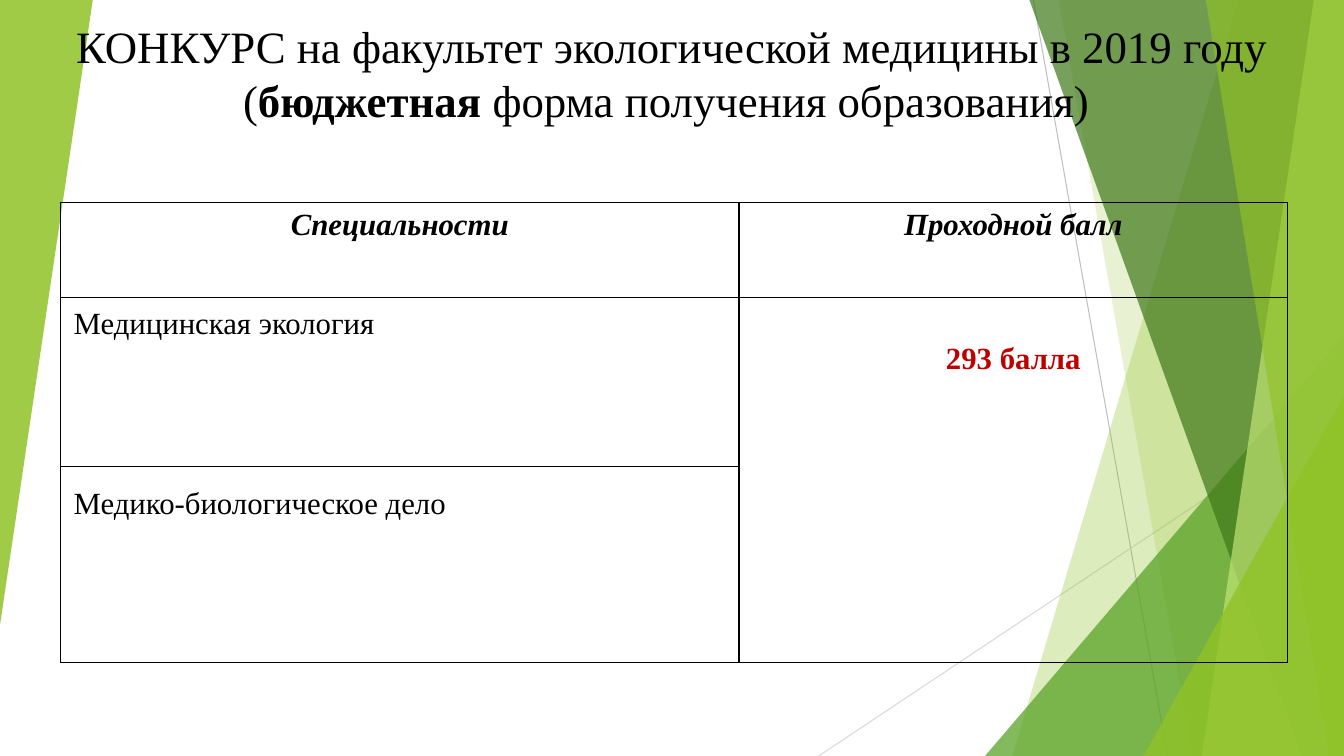
from lxml.etree import SubElement
from pptx import Presentation
from pptx.dml.color import RGBColor
from pptx.enum.shapes import MSO_CONNECTOR, MSO_SHAPE
from pptx.enum.text import MSO_ANCHOR, PP_ALIGN
from pptx.oxml.ns import qn
from pptx.util import Inches, Pt

WIDTH, HEIGHT = 13.33, 7.5
THEME = {
    "font": "Times New Roman", "title": 32, "cell": 22,
    "text": "000000", "accent": "C00000", "border": "000000",
    "lime": "90C226", "green": "54A021", "forest": "3F7819", "pale": "C0E474",
}

TITLE = [
    ("КОНКУРС на факультет экологической медицины в 2019 году (", False),
    ("бюджетная", True),
    (" форма получения образования) ", False),
]

RAYS = [
    ((10.25, 0), (11.58, HEIGHT), "BFBFBF"),
    ((WIDTH, 4.03), (8.12, HEIGHT), "D9D9D9"),
]

# kind, colour, opacity, geometry
FACETS = [
    ("band", "lime", 30, (12.28, 10.04)),
    ("band", "lime", 20, (10.5, 11.83)),
    ("triangle", "green", 72, (9.77, 3.33, 3.56, 4.17, 0)),
    ("band", "forest", 70, (10.21, 12.91)),
    ("band", "pale", 70, (13.03, 11.92)),
    ("band", "lime", 65, (11.96, 13.18)),
    ("triangle", "lime", 80, (11.34, 3.93, 1.99, 3.57, 0)),
    ("triangle", "lime", 85, (0, 0, 0.92, 6.2, 180)),
]

COLUMNS = [6.73, 5.44]
ROWS = [0.94, 1.68, 1.94]
CELLS = [
    (0, 0, "Специальности", PP_ALIGN.CENTER, True, True, "text", 0.05),
    (0, 1, "Проходной балл", PP_ALIGN.CENTER, True, True, "text", 0.05),
    (1, 0, "Медицинская экология", PP_ALIGN.LEFT, False, False, "text", 0.1),
    (1, 1, "293 балла", PP_ALIGN.CENTER, True, False, "accent", 0.44),
    (2, 0, "Медико-биологическое дело", PP_ALIGN.LEFT, False, False, "text", 0.2),
]


def rgb(name):
    return RGBColor.from_string(THEME.get(name, name))


def style_run(run, size, color, bold=False, italic=False):
    run.font.name = THEME["font"]
    run.font.size = Pt(THEME[size])
    run.font.color.rgb = rgb(color)
    run.font.bold = bold
    run.font.italic = italic


def add_ray(slide, start, end, color):
    ray = slide.shapes.add_connector(
        MSO_CONNECTOR.STRAIGHT, *(Inches(value) for value in start + end))
    ray.line.color.rgb = rgb(color)
    ray.line.width = Pt(0.75)
    SubElement(ray._element.spPr, qn("a:effectLst"))


def add_facet(slide, kind, color, opacity, geometry):
    if kind == "band":
        top_left, bottom_left = geometry
        outline = [(top_left, 0), (WIDTH, 0), (WIDTH, HEIGHT), (bottom_left, HEIGHT)]
        points = [(Inches(x), Inches(y)) for x, y in outline]
        builder = slide.shapes.build_freeform(*points[0])
        builder.add_line_segments(points[1:], close=True)
        shape = builder.convert_to_shape()
    else:
        *box, rotation = geometry
        shape = slide.shapes.add_shape(
            MSO_SHAPE.ISOSCELES_TRIANGLE, *(Inches(value) for value in box))
        shape.adjustments[0] = 1
        shape.rotation = rotation
    shape.shadow.inherit = False
    shape.line.fill.background()
    shape.fill.solid()
    shape.fill.fore_color.rgb = rgb(color)
    fill_color = shape._element.spPr.find(".//" + qn("a:srgbClr"))
    SubElement(fill_color, qn("a:alpha"), val=str(opacity * 1000))


def add_title(slide):
    box = slide.shapes.add_textbox(0, Inches(0.62), Inches(WIDTH), Inches(0.68))
    frame = box.text_frame
    frame.word_wrap = True
    frame.vertical_anchor = MSO_ANCHOR.BOTTOM
    paragraph = frame.paragraphs[0]
    paragraph.alignment = PP_ALIGN.CENTER
    for text, bold in TITLE:
        run = paragraph.add_run()
        run.text = text
        style_run(run, "title", "text", bold)


def outline_cell(cell):
    properties = cell._tc.get_or_add_tcPr()
    for side in ("a:lnL", "a:lnR", "a:lnT", "a:lnB"):
        line = SubElement(properties, qn(side), w=str(Pt(1)))
        fill = SubElement(line, qn("a:solidFill"))
        SubElement(fill, qn("a:srgbClr"), val=THEME["border"])
    cell.fill.background()


def add_score_table(slide):
    frame = slide.shapes.add_table(
        len(ROWS), len(COLUMNS), Inches(0.6), Inches(2.01),
        Inches(sum(COLUMNS)), Inches(sum(ROWS)))
    table = frame.table
    table.first_row = table.horz_banding = False
    for column, width in zip(table.columns, COLUMNS):
        column.width = Inches(width)
    for row, height in zip(table.rows, ROWS):
        row.height = Inches(height)
    for cell in table.iter_cells():
        outline_cell(cell)
    table.cell(1, 1).merge(table.cell(2, 1))
    for row, column, text, alignment, bold, italic, color, top in CELLS:
        cell = table.cell(row, column)
        cell.margin_left = cell.margin_right = Inches(0.13)
        cell.margin_top, cell.margin_bottom = Inches(top), Inches(0.05)
        cell.vertical_anchor = MSO_ANCHOR.TOP
        cell.text_frame.text = text
        paragraph = cell.text_frame.paragraphs[0]
        paragraph.alignment = alignment
        style_run(paragraph.runs[0], "cell", color, bold, italic)


def main():
    presentation = Presentation()
    presentation.slide_width = Inches(WIDTH)
    presentation.slide_height = Inches(HEIGHT)
    slide = presentation.slides.add_slide(presentation.slide_layouts[6])
    for ray in RAYS:
        add_ray(slide, *ray)
    for facet in FACETS:
        add_facet(slide, *facet)
    add_title(slide)
    add_score_table(slide)
    presentation.save("out.pptx")


if __name__ == "__main__":
    main()
